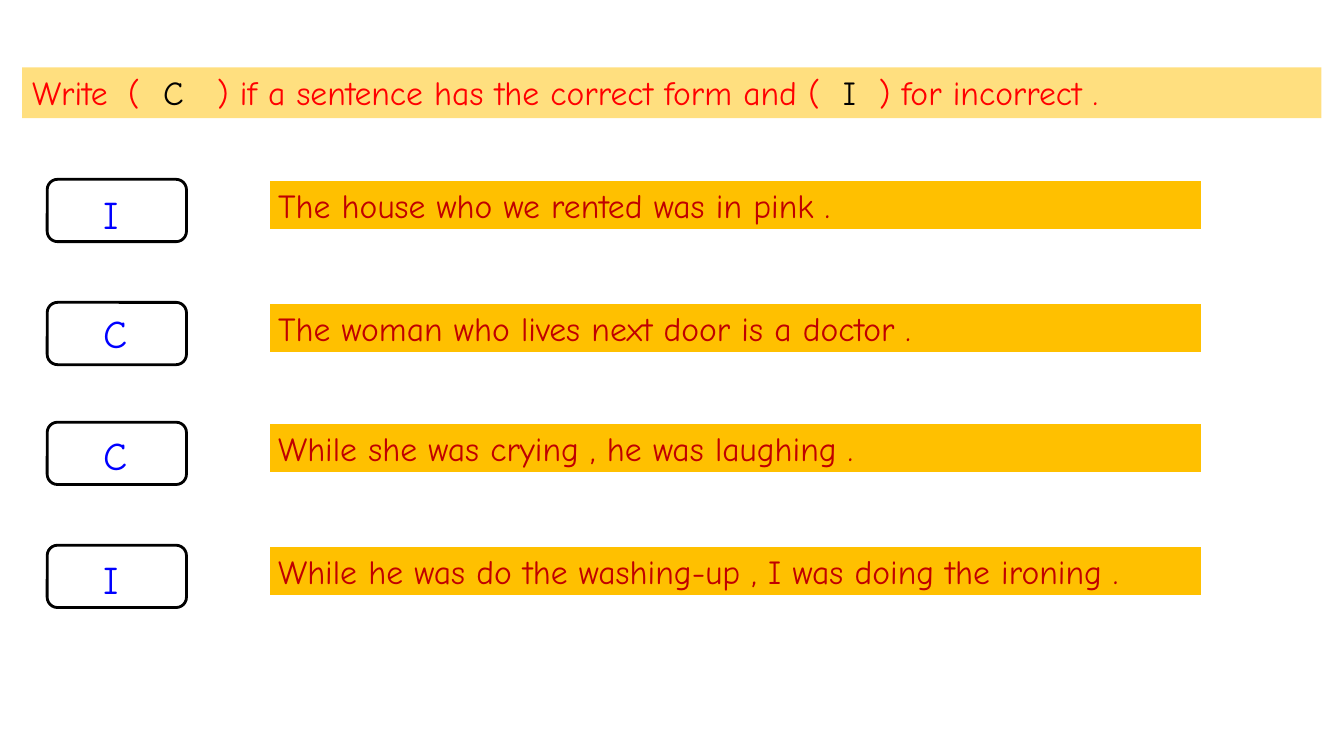
import pptx
import pptx.util
import pptx.dml.color
import pptx.enum.shapes
import pptx.enum.text
from lxml import etree

Cm, Pt = pptx.util.Cm, pptx.util.Pt
RGB = pptx.dml.color.RGBColor.from_string
SHAPE = pptx.enum.shapes.MSO_SHAPE
ANCHOR = pptx.enum.text.MSO_ANCHOR
ALIGN = pptx.enum.text.PP_ALIGN

THEME = {
    "amber": "FFC000", "white": "FFFFFF", "black": "000000",
    "instruction": {"name": "Comic Neue", "size": Pt(24), "color": "FF0000"},
    "key": {"name": "Comic Neue", "size": Pt(24), "color": "000000"},
    "sentence": {"name": "Comic Neue", "size": Pt(24), "color": "C00000"},
    "answer": {"name": "Comic Neue", "size": Pt(28), "color": "0000FF"},
}


def add_block(shapes, kind, box, fill=None, line=None, width=0):
    sp = shapes.add_shape(kind, *[Cm(v) for v in box])
    sp.shadow.inherit = False
    if fill:
        sp.fill.solid()
        sp.fill.fore_color.rgb = RGB(fill)
    else:
        sp.fill.background()
    if line:
        sp.line.color.rgb = RGB(line)
        sp.line.width = Pt(width)
    else:
        sp.line.fill.background()
    return sp


def write(tf, runs, anchor):
    """Fill the first paragraph with (text, theme style) runs."""
    tf.word_wrap = True
    tf.vertical_anchor = anchor
    p = tf.paragraphs[0]
    p.alignment = ALIGN.LEFT
    for text, style in runs:
        r = p.add_run()
        r.text = text
        for key, value in THEME[style].items():
            if key == "color":
                r.font.color.rgb = RGB(value)
            else:
                setattr(r.font, key, value)
    return p


prs = pptx.Presentation()
prs.slide_width, prs.slide_height = Cm(33.87), Cm(19.05)
s = prs.slides.add_slide(prs.slide_layouts[6])

# Instruction bar, half transparent, with tab stops around the key letters
bar = add_block(s.shapes, SHAPE.RECTANGLE, (0.56, 1.7, 32.74, 1.28), THEME["amber"])
color = bar.fill._xPr.find(".//" + pptx.oxml.ns.qn("a:srgbClr"))
etree.SubElement(color, pptx.oxml.ns.qn("a:alpha"), val="50000")
p = write(bar.text_frame, [
    ("Write\t(\t", "instruction"),
    ("C", "key"),
    ("\t) if a sentence has the correct form and (\t", "instruction"),
    ("I", "key"),
    ("\t) for incorrect .", "instruction"),
], ANCHOR.TOP)
tabs = etree.SubElement(p._p.get_or_add_pPr(), pptx.oxml.ns.qn("a:tabLst"))
for stop in (2.42, 3.3, 4.66, 20.43, 21.34):
    etree.SubElement(tabs, pptx.oxml.ns.qn("a:tab"), pos=str(Cm(stop)), algn="l")

# One row per sentence: row top, answer top, answer, sentence
rows = [
    (4.52, 4.67, "I", "The house who we rented was in pink ."),
    (7.62, 7.67, "C", "The woman who lives next door is a doctor ."),
    (10.64, 10.74, "C", "While she was crying , he was laughing ."),
    (13.74, 13.87, "I", "While he was do the washing-up , I was doing the ironing ."),
]
for top, answer_top, answer, sentence in rows:
    add_block(s.shapes, SHAPE.ROUNDED_RECTANGLE, (1.19, top, 3.51, 1.57),
              line=THEME["black"], width=2)
    sp = add_block(s.shapes, SHAPE.RECTANGLE, (6.76, top, 23.57, 1.3),
                   THEME["amber"], THEME["white"], 3)
    write(sp.text_frame, [(sentence, "sentence")], ANCHOR.MIDDLE)
    tb = s.shapes.add_textbox(Cm(1.91), Cm(answer_top), Cm(2.11), Cm(1.45))
    tb.text_frame.margin_left = Cm(0.69)
    write(tb.text_frame, [(answer, "answer")], ANCHOR.TOP)

prs.save("out.pptx")
